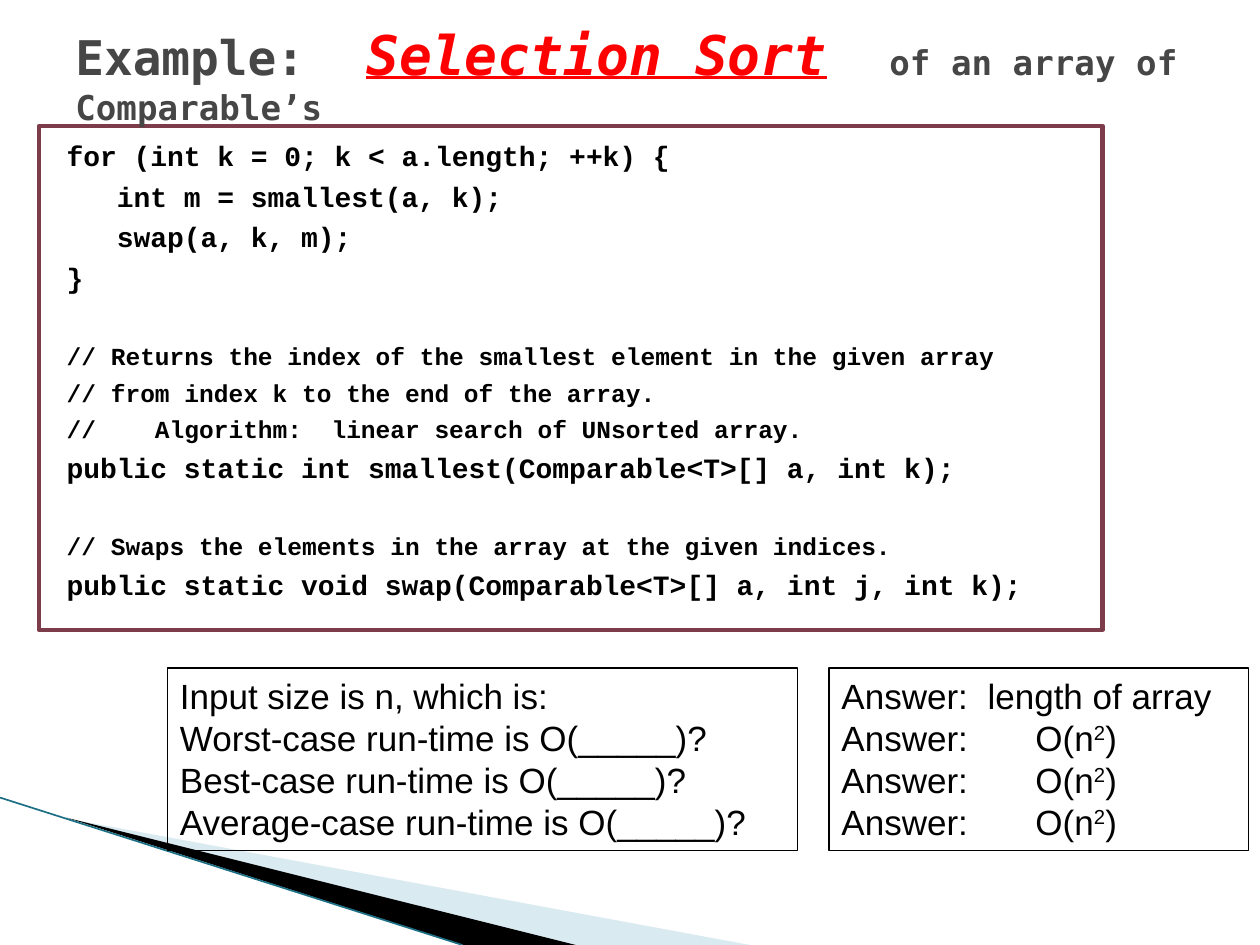
from dataclasses import dataclass

from lxml import etree
from pptx import Presentation
from pptx.dml.color import RGBColor
from pptx.enum.shapes import MSO_CONNECTOR, MSO_SHAPE
from pptx.enum.text import MSO_ANCHOR, PP_ALIGN
from pptx.oxml.ns import qn
from pptx.util import Pt

RECT = MSO_SHAPE.RECTANGLE
LINE = MSO_CONNECTOR.STRAIGHT
TOP, MIDDLE = MSO_ANCHOR.TOP, MSO_ANCHOR.MIDDLE
LEFT = PP_ALIGN.LEFT
SCALE = 9144  # 100 px to the inch


@dataclass(frozen=True)
class Theme:
    ink: str = "000000"
    title: str = "464646"
    accent: str = "FF0000"
    frame: str = "7D3C4A"
    pale: str = "A0CBDC"
    edge: str = "1C6F84"
    mono: str = "Courier New"
    sans: str = "Arial"
    head: str = "DejaVu Sans Mono"
    code: int = 16
    note: int = 14
    body: int = 20
    big: float = 27.3
    huge: float = 31.2
    small: float = 19.5


def px(n):
    return round(n * SCALE)


def rgb(code):
    return RGBColor.from_string(code)


def write(para, text, *, font, size, color, bold=False, italic=False,
          under=False, base=0):
    run = para.add_run()
    run.text = text
    style = run.font
    style.name, style.size = font, Pt(size)
    style.color.rgb = rgb(color)
    style.bold, style.italic, style.underline = bold, italic, under
    if base:
        run._r.get_or_add_rPr().set("baseline", str(base * 1000))


def set_tabs(para, stops):
    tabs = etree.SubElement(para._p.get_or_add_pPr(), qn("a:tabLst"))
    for stop in stops:
        etree.SubElement(tabs, qn("a:tab"), pos=str(px(stop)), algn="l")


class Deck:
    def __init__(self, theme):
        self.theme = theme
        self.file = Presentation()
        self.file.slide_width, self.file.slide_height = px(1000), px(750)
        self.slide = self.file.slides.add_slide(self.file.slide_layouts[6])
        self.shapes = self.slide.shapes

    def wedge(self, points, color, alpha=100):
        pen = self.shapes.build_freeform(*points[0], scale=SCALE)
        pen.add_line_segments(points[1:], close=True)
        shape = pen.convert_to_shape()
        shape.shadow.inherit = False
        shape.line.fill.background()
        shape.fill.solid()
        shape.fill.fore_color.rgb = rgb(color)
        if alpha < 100:
            tint = shape._element.spPr.find(".//" + qn("a:srgbClr"))
            etree.SubElement(tint, qn("a:alpha"), val=str(alpha * 1000))

    def rule(self, start, end, color, width):
        line = self.shapes.add_connector(LINE, *map(px, start + end))
        line.line.color.rgb, line.line.width = rgb(color), Pt(width)
        etree.SubElement(line._element.spPr, qn("a:effectLst"))

    def frame(self, box, color, width, inset=(10, 5)):
        shape = self.shapes.add_shape(RECT, *map(px, box))
        shape.shadow.inherit = False
        shape.fill.background()
        shape.line.color.rgb, shape.line.width = rgb(color), Pt(width)
        return self.setup(shape, TOP, inset)

    def label(self, box, anchor):
        return self.setup(self.shapes.add_textbox(*map(px, box)), anchor)

    def setup(self, shape, anchor, inset=(10, 5)):
        frame = shape.text_frame
        frame.word_wrap, frame.vertical_anchor = True, anchor
        frame.margin_left, frame.margin_top = map(px, inset)
        return frame

    def lines(self, frame, rows, tabs=()):
        """Fill a frame; a row is (size, space before, [(text, format), ...])."""
        for i, (size, before, runs) in enumerate(rows):
            para = frame.paragraphs[0] if i == 0 else frame.add_paragraph()
            para.alignment = LEFT
            if tabs:
                set_tabs(para, tabs[i])
            para.line_spacing = Pt(size * 1.2)
            para.space_before = Pt(before if i else 0)
            for text, look in runs:
                write(para, text, size=size, color=self.theme.ink, **look)

    def title(self, box, runs, stops):
        para = self.label(box, MIDDLE).paragraphs[0]
        set_tabs(para, stops)
        for text, look in runs:
            write(para, text, font=self.theme.head, bold=True, **look)


def main():
    theme = Theme()
    deck = Deck(theme)

    deck.wedge([(55, 650), (595, 750), (456, 750)], theme.pale, 40)
    deck.wedge([(53, 649), (457, 750), (368, 750)], theme.ink)
    deck.rule((0, 633), (367, 750), theme.edge, 0.95)

    near, far = 4, 27
    code = [
        (theme.code, near, "for (int k = 0; k < a.length; ++k) {"),
        (theme.code, near, "   int m = smallest(a, k);"),
        (theme.code, near, "   swap(a, k, m);"),
        (theme.code, near, "}"),
        (theme.note, far, "// Returns the index of the smallest element in the given array"),
        (theme.note, near, "// from index k to the end of the array."),
        (theme.note, near, "//    Algorithm:  linear search of UNsorted array."),
        (theme.code, near, "public static int smallest(Comparable<T>[] a, int k);"),
        (theme.note, far, "// Swaps the elements in the array at the given indices."),
        (theme.code, near, "public static void swap(Comparable<T>[] a, int j, int k);"),
    ]
    mono = dict(font=theme.mono, bold=True)
    frame = deck.frame((31, 100, 844, 400), theme.frame, 2.5, inset=(22, 10))
    deck.lines(frame, [(size, gap, [(text, mono)]) for size, gap, text in code])

    sans = dict(font=theme.sans)
    asks = ["Input size is n, which is:"]
    asks += [f"{case}-case run-time is O(_____)?"
             for case in ("Worst", "Best", "Average")]
    frame = deck.frame((133, 530, 500, 145), theme.ink, 1)
    deck.lines(frame, [(theme.body, 0, [(ask, sans)]) for ask in asks])

    square = [("Answer:\tO(n", sans), ("2", dict(sans, base=30)), (")", sans)]
    replies = [[("Answer:\tlength of array", sans)]] + [square] * 3
    frame = deck.frame((658, 530, 333, 145), theme.ink, 1)
    deck.lines(frame, [(theme.body, 0, reply) for reply in replies],
               tabs=[[116]] + [[154]] * 3)

    deck.title((50, 17, 942, 83), [
        ("Example:\t", dict(size=theme.big, color=theme.title)),
        ("Selection Sort", dict(size=theme.huge, color=theme.accent,
                                italic=True, under=True)),
        ("\tof an array of Comparable’s",
         dict(size=theme.small, color=theme.title)),
    ], stops=[231, 646])

    deck.file.save("out.pptx")


if __name__ == "__main__":
    main()
